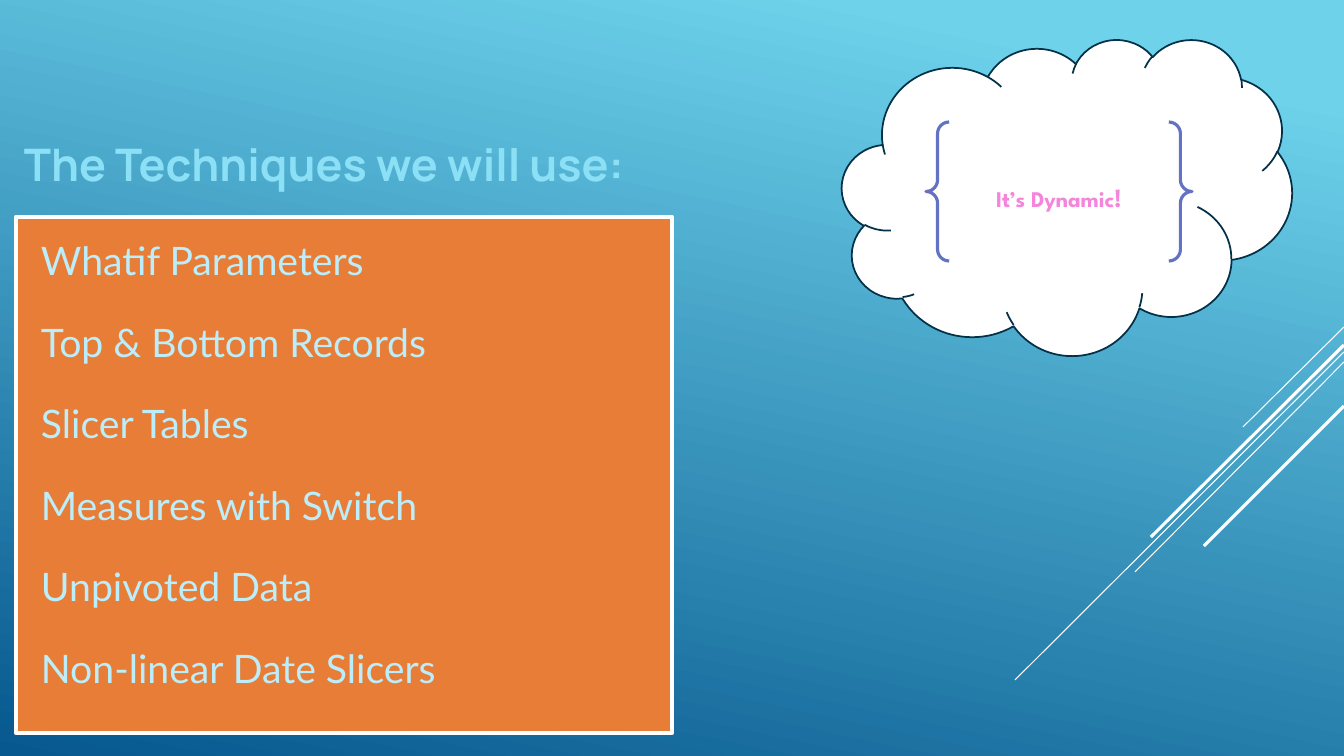
from dataclasses import dataclass

from lxml import etree
from pptx import Presentation
from pptx import util as u
from pptx.dml.color import RGBColor
from pptx.enum import shapes, text
from pptx.oxml.ns import qn
from pptx.shapes.autoshape import Shape
from pptx.slide import Slide
from pptx.text.text import _Paragraph as Paragraph


@dataclass(frozen=True)
class Theme:
    sky: str = "6ED2EB"
    deep: str = "06588E"
    white: str = "FFFFFF"
    orange: str = "E87D37"
    cloud_line: str = "043148"
    brace: str = "6472C3"
    pink: str = "F585DB"
    title: str = "8BE0F6"
    item: str = "BBEDFA"
    title_size: int = 32
    item_size: int = 28
    slogan_size: int = 16
    exclamation_size: int = 18


@dataclass(frozen=True)
class Box:
    left: int
    top: int
    width: int
    height: int


@dataclass(frozen=True)
class Streak:
    start_y: int
    end_x: int
    end_y: int
    weight: float


@dataclass(frozen=True)
class Technique:
    label: str
    width: int


@dataclass(frozen=True)
class Style:
    font: str
    size: int
    color: str
    bold: bool = False


THEME = Theme()
SLIDE_WIDTH, SLIDE_HEIGHT = 1344, 756
FIRST_TOP, LAST_TOP = 236, 644
ITEM_LEFT, ITEM_HEIGHT = 41, 47

STREAKS = [
    Streak(327, 1243, 427, 0.75),
    Streak(352, 1015, 680, 0.75),
    Streak(362, 1135, 572, 0.75),
    Streak(345, 1151, 537, 2.25),
    Streak(406, 1204, 546, 2.25),
]
TECHNIQUES = [
    Technique("Whatif Parameters", 338),
    Technique("Top & Bottom Records", 404),
    Technique("Slicer Tables", 285),
    Technique("Measures with Switch", 385),
    Technique("Unpivoted Data", 327),
    Technique("Non-linear Date Slicers", 471),
]


def px(length: int) -> u.Emu:
    return u.Emu(round(length * 914400 / 100.8))


def rgb(color: str) -> RGBColor:
    return RGBColor.from_string(color)


def place(box: Box) -> tuple[u.Emu, u.Emu, u.Emu, u.Emu]:
    return px(box.left), px(box.top), px(box.width), px(box.height)


def paint_background(slide: Slide) -> None:
    fill = slide.background.fill
    fill.gradient()
    fill.gradient_angle = 360 - 102
    stops = [(0.1, THEME.sky), (1.0, THEME.deep)]
    for stop, (position, color) in zip(fill.gradient_stops, stops):
        stop.position = position
        stop.color.rgb = rgb(color)


def add_streak(slide: Slide, streak: Streak) -> None:
    connector = slide.shapes.add_connector(
        shapes.MSO_CONNECTOR.STRAIGHT,
        px(SLIDE_WIDTH), px(streak.start_y), px(streak.end_x), px(streak.end_y),
    )
    connector.line.color.rgb = rgb(THEME.white)
    connector.line.width = u.Pt(streak.weight)
    etree.SubElement(connector._element.spPr, qn("a:effectLst"))


def add_figure(slide: Slide, kind: shapes.MSO_SHAPE, box: Box,
               fill: str | None, line: str, weight: float) -> Shape:
    shape = slide.shapes.add_shape(kind, *place(box))
    shape.shadow.inherit = False
    if fill is None:
        shape.fill.background()
    else:
        shape.fill.solid()
        shape.fill.fore_color.rgb = rgb(fill)
    shape.line.color.rgb = rgb(line)
    shape.line.width = u.Pt(weight)
    return shape


def add_run(paragraph: Paragraph, words: str, style: Style) -> None:
    run = paragraph.add_run()
    run.text = words
    run.font.name = style.font
    run.font.size = u.Pt(style.size)
    run.font.bold = style.bold
    run.font.color.rgb = rgb(style.color)


def add_label(slide: Slide, words: str, box: Box, style: Style,
              anchor: text.MSO_ANCHOR = text.MSO_ANCHOR.TOP) -> Paragraph:
    frame = slide.shapes.add_textbox(*place(box)).text_frame
    frame.word_wrap = True
    frame.auto_size = text.MSO_AUTO_SIZE.SHAPE_TO_FIT_TEXT
    frame.vertical_anchor = anchor
    frame.margin_left = frame.margin_right = 0
    frame.margin_top = frame.margin_bottom = 0
    paragraph = frame.paragraphs[0]
    add_run(paragraph, words, style)
    return paragraph


def add_techniques(slide: Slide) -> None:
    add_figure(slide, shapes.MSO_SHAPE.RECTANGLE, Box(16, 217, 656, 516),
               THEME.orange, THEME.white, 3)
    title = add_label(slide, "The Techniques we will use:", Box(24, 141, 634, 49),
                      Style("Manrope", THEME.title_size, THEME.title, True),
                      text.MSO_ANCHOR.MIDDLE)
    title.line_spacing = u.Pt(35)
    item_style = Style("Lato", THEME.item_size, THEME.item)
    step = (LAST_TOP - FIRST_TOP) / (len(TECHNIQUES) - 1)
    for index, technique in enumerate(TECHNIQUES):
        top = round(FIRST_TOP + index * step)
        add_label(slide, technique.label,
                  Box(ITEM_LEFT, top, technique.width, ITEM_HEIGHT), item_style)


def add_slogan(slide: Slide) -> None:
    add_figure(slide, shapes.MSO_SHAPE.CLOUD, Box(842, 39, 450, 316),
               THEME.white, THEME.cloud_line, 1.25)
    braces = add_figure(slide, shapes.MSO_SHAPE.DOUBLE_BRACE, Box(926, 122, 266, 139),
                        None, THEME.brace, 2.25)
    braces.text_frame.vertical_anchor = text.MSO_ANCHOR.MIDDLE
    paragraph = braces.text_frame.paragraphs[0]
    paragraph.alignment = text.PP_ALIGN.CENTER
    for words, size in [("It’s Dynamic", THEME.slogan_size), ("!", THEME.exclamation_size)]:
        add_run(paragraph, words, Style("League Spartan", size, THEME.pink, True))


def main() -> None:
    presentation = Presentation()
    presentation.slide_width = px(SLIDE_WIDTH)
    presentation.slide_height = px(SLIDE_HEIGHT)
    slide = presentation.slides.add_slide(presentation.slide_layouts[6])
    paint_background(slide)
    for streak in STREAKS:
        add_streak(slide, streak)
    add_techniques(slide)
    add_slogan(slide)
    presentation.save("out.pptx")


if __name__ == "__main__":
    main()
